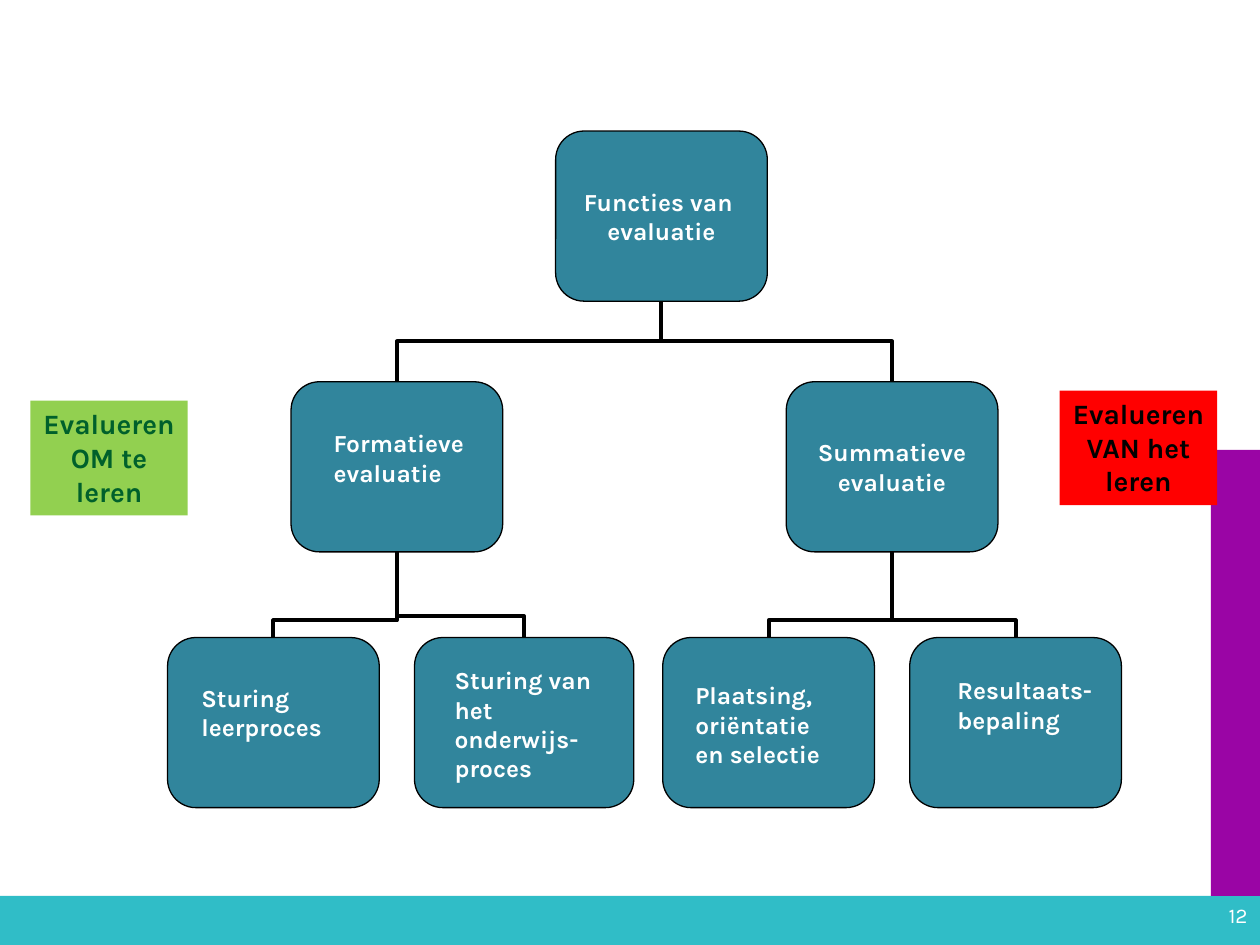
from typing import NamedTuple

from lxml.etree import SubElement
from pptx import Presentation
from pptx.dml.color import RGBColor
from pptx.enum.shapes import MSO_CONNECTOR as Link, MSO_SHAPE as Form
from pptx.enum.text import MSO_ANCHOR as Anchor, PP_ALIGN as Align
from pptx.oxml.ns import qn
from pptx.util import Inches, Pt

TEAL = RGBColor(0x30, 0xBD, 0xC7)
PURPLE = RGBColor(0x9A, 0x05, 0xA5)
BLUE = RGBColor(0x31, 0x85, 0x9C)
RED = RGBColor(0xFF, 0, 0)
LIME = RGBColor(0x92, 0xD0, 0x50)
GREEN = RGBColor(0, 0x60, 0x2B)
INK = RGBColor(1, 0, 0)
BLACK = RGBColor(0, 0, 0)
WHITE = RGBColor(0xFF, 0xFF, 0xFF)
HIGH = 1.35


class Node(NamedTuple):
    left: float
    top: float
    wide: float = 1.68
    lines: tuple = ()

    @property
    def mid(self) -> float:
        return self.left + self.wide / 2


class Edge(NamedTuple):
    child: Node
    parent: Node
    bend: float


class Label(NamedTuple):
    left: float
    top: float
    wide: float
    high: float
    lines: tuple


class Tag(NamedTuple):
    left: float
    top: float
    text: str
    fill: RGBColor
    ink: RGBColor


ROOT = Node(4.41, 1.04, lines=("Functies van ", "evaluatie"))
FORM = Node(2.31, 3.03)
SUM = Node(6.24, 3.03, lines=("Summatieve", "evaluatie"))
LEAVES = [Node(1.33, 5.06), Node(3.29, 5.06, 1.74), Node(5.26, 5.06), Node(7.22, 5.06)]
EDGES = [
    Edge(LEAVES[3], SUM, 0.2),
    Edge(LEAVES[2], SUM, 0.2),
    Edge(LEAVES[1], FORM, 0.25),
    Edge(LEAVES[0], FORM, 0.2),
    Edge(SUM, ROOT, 0.5),
    Edge(FORM, ROOT, 0.5),
]
TAGS = [
    Tag(8.41, 3.1, "Evalueren VAN het leren", RED, INK),
    Tag(0.24, 3.18, "Evalueren OM te leren", LIME, GREEN),
]
LABELS = [
    Label(2.55, 3.35, 5, 0.57, ("Formatieve", "evaluatie")),
    Label(1.5, 5.37, 1.23, 0.57, ("Sturing", "leerproces")),
    Label(5.42, 5.35, 5, 0.81, ("Plaatsing,", "oriëntatie", "en selectie")),
    Label(3.51, 5.23, 1.47, 1.04, ("Sturing van het", "onderwijs-", "proces")),
    Label(7.5, 5.31, 1.4, 0.57, ("Resultaats-", "bepaling")),
]


def write(frame, lines, size: float, ink: RGBColor, align=Align.LEFT, bold=True) -> None:
    for i, line in enumerate(lines):
        para = frame.add_paragraph() if i else frame.paragraphs[0]
        para.text = line
        para.alignment = align
        font = para.font
        font.name, font.size, font.bold = "Karla", Pt(size), bold
        font.color.rgb = ink


def block(slide, form, left, top, wide, high, fill: RGBColor):
    shape = slide.shapes.add_shape(form, Inches(left), Inches(top), Inches(wide), Inches(high))
    shape.shadow.inherit = False
    shape.fill.solid()
    shape.fill.fore_color.rgb = fill
    shape.line.fill.background()
    return shape


def draw_edge(slide, edge: Edge) -> None:
    child, parent = edge.child, edge.parent
    low, top = child.top, parent.top + HIGH
    span, run = low - top, abs(child.mid - parent.mid)
    x, y = (child.mid + parent.mid - span) / 2, (low + top - run) / 2
    line = slide.shapes.add_connector(
        Link.ELBOW, Inches(x), Inches(y), Inches(x + span), Inches(y + run))
    line.line.color.rgb = BLACK
    line.line.width = Pt(2.25)
    props = line._element.spPr
    frame = props.find(qn("a:xfrm"))
    frame.set("rot", str(270 * 60000))
    if child.mid > parent.mid:
        frame.set("flipV", "1")
    guides = props.find(qn("a:prstGeom")).get_or_add_avLst()
    SubElement(guides, qn("a:gd"), name="adj1", fmla=f"val {round(edge.bend * 100000)}")
    SubElement(props, qn("a:effectLst"))


def draw_node(slide, node: Node) -> None:
    shape = block(slide, Form.ROUNDED_RECTANGLE, node.left, node.top, node.wide, HIGH, BLUE)
    shape.line.color.rgb = BLACK
    shape.line.width = Pt(0.75)
    if node.lines:
        frame = shape.text_frame
        frame.margin_left = frame.margin_right = frame.margin_top = frame.margin_bottom = 0
        frame.word_wrap = False
        frame.vertical_anchor = Anchor.MIDDLE
        write(frame, node.lines, 14, WHITE, Align.CENTER)


def draw_tag(slide, tag: Tag) -> None:
    shape = block(slide, Form.RECTANGLE, tag.left, tag.top, 1.25, 0.91, tag.fill)
    frame = shape.text_frame
    frame.word_wrap = True
    frame.vertical_anchor = Anchor.TOP
    write(frame, [tag.text], 16, tag.ink, Align.CENTER)


def add_text(slide, label: Label):
    box = slide.shapes.add_textbox(
        Inches(label.left), Inches(label.top), Inches(label.wide), Inches(label.high))
    box.text_frame.word_wrap = True
    return box.text_frame


def main() -> None:
    """Build the slide with the tree of evaluation functions."""
    deck = Presentation()
    deck.slide_width, deck.slide_height = Inches(10), Inches(7.5)
    slide = deck.slides.add_slide(deck.slide_layouts[6])
    block(slide, Form.RECTANGLE, 0, 7.11, 10, 0.39, TEAL)
    block(slide, Form.RECTANGLE, 9.61, 3.57, 0.39, 3.54, PURPLE)
    page = Label(7.67, 7.03, 2.33, 0.47, ("12",))
    frame = add_text(slide, page)
    frame.vertical_anchor = Anchor.MIDDLE
    write(frame, page.lines, 12, WHITE, Align.RIGHT, False)
    for edge in EDGES:
        draw_edge(slide, edge)
    for node in [ROOT, FORM, SUM, *LEAVES]:
        draw_node(slide, node)
    for tag in TAGS:
        draw_tag(slide, tag)
    for label in LABELS:
        write(add_text(slide, label), label.lines, 14, WHITE)
    deck.save("out.pptx")


if __name__ == "__main__":
    main()
